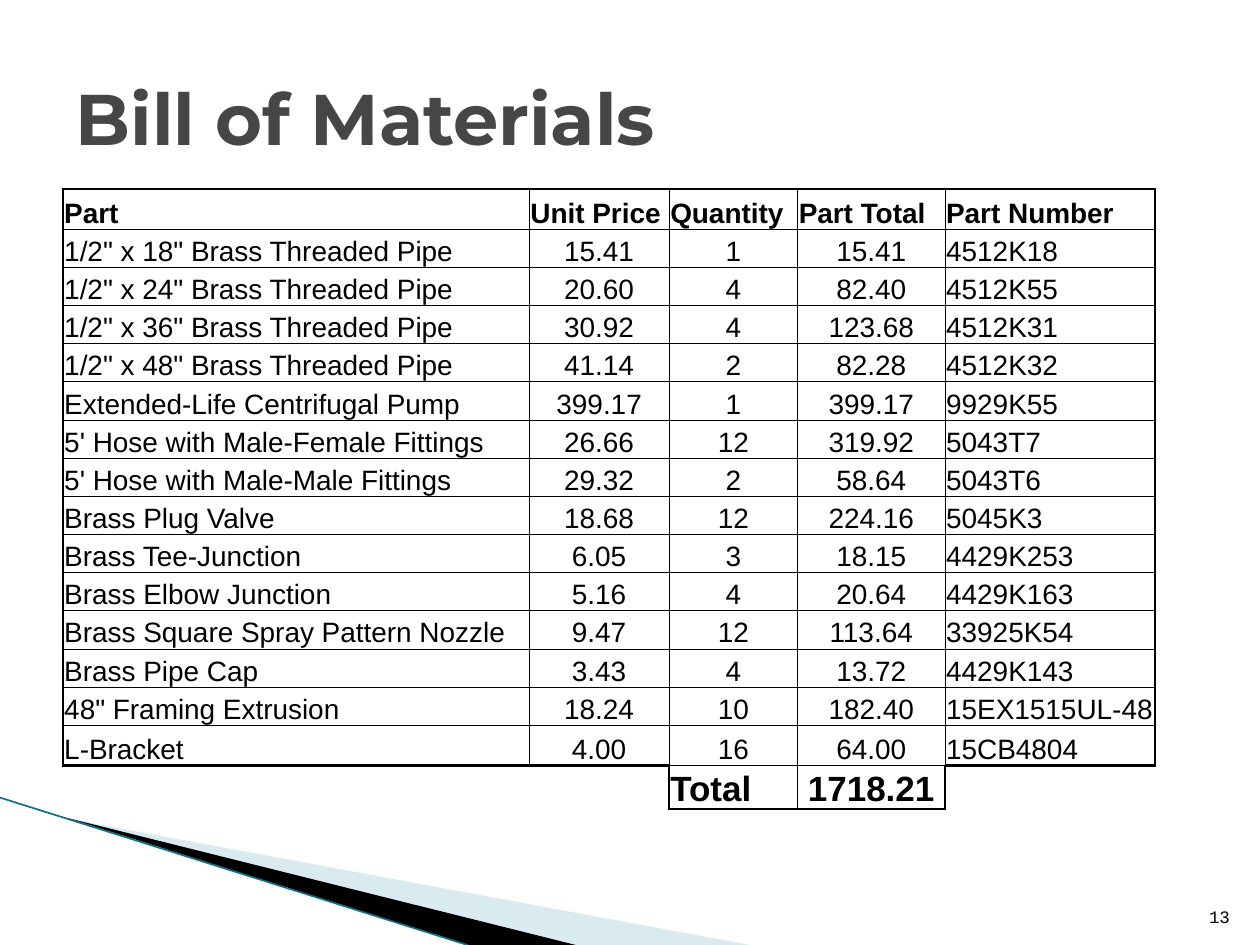
from dataclasses import dataclass
from typing import NamedTuple

from lxml.etree import SubElement
from pptx import Presentation
from pptx.dml.color import RGBColor
from pptx.enum.shapes import MSO_CONNECTOR
from pptx.enum.text import MSO_ANCHOR, PP_ALIGN
from pptx.oxml.ns import qn
from pptx.util import Inches, Pt


@dataclass(frozen=True)
class Theme:
    ink: str = "000000"
    title: str = "464646"
    pale: str = "A0CBDC"
    teal: str = "0F6F85"
    title_font: str = "Montserrat"
    table_font: str = "Arial"
    number_font: str = "Courier New"
    title_size: float = 41
    table_size: float = 16
    total_size: float = 20
    number_size: float = 10
    thin: float = 0.5
    thick: float = 1.5


class Part(NamedTuple):
    name: str
    price: float
    quantity: int
    number: str

    @property
    def total(self) -> float:
        return self.price * self.quantity


class Wedge(NamedTuple):
    points: tuple
    color: str
    opacity: int


THEME = Theme()
HEADINGS = ("Part", "Unit Price", "Quantity", "Part Total", "Part Number")
PARTS = (
    Part('1/2" x 18" Brass Threaded Pipe', 15.41, 1, "4512K18"),
    Part('1/2" x 24" Brass Threaded Pipe', 20.60, 4, "4512K55"),
    Part('1/2" x 36" Brass Threaded Pipe', 30.92, 4, "4512K31"),
    Part('1/2" x 48" Brass Threaded Pipe', 41.14, 2, "4512K32"),
    Part("Extended-Life Centrifugal Pump", 399.17, 1, "9929K55"),
    Part("5' Hose with Male-Female Fittings", 26.66, 12, "5043T7"),
    Part("5' Hose with Male-Male Fittings", 29.32, 2, "5043T6"),
    Part("Brass Plug Valve", 18.68, 12, "5045K3"),
    Part("Brass Tee-Junction", 6.05, 3, "4429K253"),
    Part("Brass Elbow Junction", 5.16, 4, "4429K163"),
    Part("Brass Square Spray Pattern Nozzle", 9.47, 12, "33925K54"),
    Part("Brass Pipe Cap", 3.43, 4, "4429K143"),
    Part('48" Framing Extrusion', 18.24, 10, "15EX1515UL-48"),
    Part("L-Bracket", 4.00, 16, "15CB4804"),
)
COLUMN_WIDTHS = (3.7, 1.11, 1.02, 1.17, 1.67)
TABLE_HEIGHT = 4.91
EDGE_ROW, TOTAL_ROW = 0.32, 0.33
WEDGES = (
    Wedge(((0.55, 6.5), (5.95, 7.5), (4.56, 7.5)), THEME.pale, 40),
    Wedge(((0.53, 6.49), (4.57, 7.5), (3.72, 7.5)), THEME.ink, 100),
)


def write(frame, text: str, *, font: str, size: float, color: str = THEME.ink,
          bold: bool = False, align=PP_ALIGN.LEFT) -> None:
    para = frame.paragraphs[0]
    para.alignment = align
    span = para.add_run()
    span.text = text
    span.font.name, span.font.size, span.font.bold = font, Pt(size), bold
    span.font.color.rgb = RGBColor.from_string(color)


def draw_wedge(page, wedge: Wedge) -> None:
    start, *others = [(Inches(x), Inches(y)) for x, y in wedge.points]
    builder = page.shapes.build_freeform(*start)
    builder.add_line_segments(others, close=True)
    shape = builder.convert_to_shape()
    shape.shadow.inherit = False
    shape.line.fill.background()
    shape.fill.solid()
    shape.fill.fore_color.rgb = RGBColor.from_string(wedge.color)
    if wedge.opacity < 100:
        color = shape.fill._xPr.find(f".//{qn('a:srgbClr')}")
        SubElement(color, qn("a:alpha"), val=str(wedge.opacity * 1000))


def draw_edge_line(page) -> None:
    line = page.shapes.add_connector(MSO_CONNECTOR.STRAIGHT, Inches(0), Inches(6.33),
                                     Inches(3.71), Inches(7.5))
    line.line.color.rgb = RGBColor.from_string(THEME.teal)
    line.line.width = Pt(0.95)
    SubElement(line._element.spPr, qn("a:effectLst"))


def add_border(cell, side: str, width: float) -> None:
    border = SubElement(cell._tc.get_or_add_tcPr(), qn(f"a:ln{side}"), w=str(Pt(width)))
    if width:
        fill = SubElement(border, qn("a:solidFill"))
        SubElement(fill, qn("a:srgbClr"), val=THEME.ink)
    else:
        SubElement(border, qn("a:noFill"))


def border_cell(cell, rows: list, row: int, column: int) -> None:
    """Draw thick edges around the filled cells and thin ones between them."""
    def is_filled(r: int, c: int) -> bool:
        return 0 <= r < len(rows) and 0 <= c < len(HEADINGS) and bool(rows[r][c])

    widths = (0, THEME.thick, THEME.thin)
    for side, down, right in (("L", 0, -1), ("R", 0, 1), ("T", -1, 0), ("B", 1, 0)):
        neighbours = is_filled(row, column) + is_filled(row + down, column + right)
        add_border(cell, side, widths[neighbours])


def table_rows() -> list:
    rows = [HEADINGS]
    rows += [(part.name, f"{part.price:.2f}", str(part.quantity), f"{part.total:.2f}", part.number)
             for part in PARTS]
    rows.append(("", "", "Total", f"{sum(part.total for part in PARTS):.2f}", ""))
    return rows


def draw_table(page) -> None:
    rows = table_rows()
    last = len(rows) - 1
    table = page.shapes.add_table(len(rows), len(HEADINGS), Inches(0.5), Inches(1.5),
                                  Inches(sum(COLUMN_WIDTHS)), Inches(TABLE_HEIGHT)).table
    table.first_row = table.horz_banding = False
    for column, width in zip(table.columns, COLUMN_WIDTHS):
        column.width = Inches(width)
    middle = (TABLE_HEIGHT - 2 * EDGE_ROW - TOTAL_ROW) / (len(rows) - 3)
    heights = [EDGE_ROW] + [middle] * (len(rows) - 3) + [EDGE_ROW, TOTAL_ROW]

    for r, (texts, height) in enumerate(zip(rows, heights)):
        table.rows[r].height = Inches(height)
        for c, text in enumerate(texts):
            cell = table.cell(r, c)
            cell.margin_left = cell.margin_right = cell.margin_top = Inches(0.01)
            cell.margin_bottom = 0
            cell.vertical_anchor = MSO_ANCHOR.BOTTOM
            border_cell(cell, rows, r, c)
            cell.fill.background()
            if text:
                centred = r > 0 and c in (1, 2, 3) and text != "Total"
                write(cell.text_frame, text, font=THEME.table_font,
                      size=THEME.total_size if r == last else THEME.table_size,
                      bold=r in (0, last),
                      align=PP_ALIGN.CENTER if centred else PP_ALIGN.LEFT)


def draw_title(page) -> None:
    title = page.shapes.title
    title.left, title.top, title.width, title.height = map(Inches, (0.5, 0.3, 9, 1.25))
    title.text_frame.vertical_anchor = MSO_ANCHOR.MIDDLE
    write(title.text_frame, "Bill of Materials", font=THEME.title_font,
          size=THEME.title_size, color=THEME.title, bold=True)


def draw_page_number(page) -> None:
    box = page.shapes.add_textbox(*map(Inches, (9.46, 7.01, 0.4, 0.4)))
    box.text_frame.word_wrap = True
    box.text_frame.vertical_anchor = MSO_ANCHOR.BOTTOM
    write(box.text_frame, "13", font=THEME.number_font, size=THEME.number_size,
          align=PP_ALIGN.RIGHT)


def main() -> None:
    deck = Presentation()
    deck.slide_width, deck.slide_height = Inches(10), Inches(7.5)
    page = deck.slides.add_slide(deck.slide_layouts.get_by_name("Title Only"))
    for wedge in WEDGES:
        draw_wedge(page, wedge)
    draw_edge_line(page)
    draw_page_number(page)
    draw_title(page)
    draw_table(page)
    deck.save("out.pptx")


if __name__ == "__main__":
    main()
